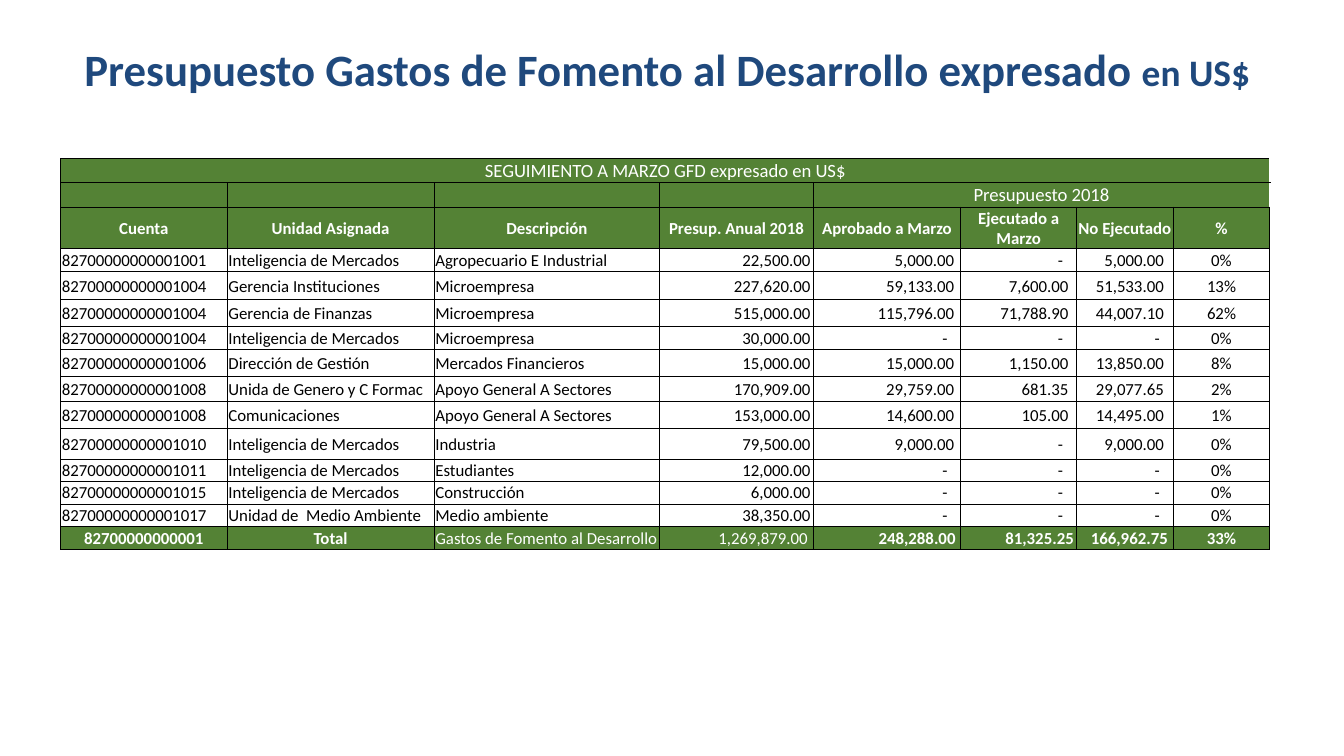
from typing import NamedTuple

import pptx
import pptx.dml.color
import pptx.enum.text
import pptx.oxml
import pptx.oxml.ns
import pptx.table
import pptx.util

Inches = pptx.util.Inches
Pt = pptx.util.Pt
ALIGN = pptx.enum.text.PP_ALIGN
ANCHOR = pptx.enum.text.MSO_ANCHOR

COLORS = {"title": "1F497D", "green": "548235", "white": "FFFFFF", "black": "000000"}
FONT = "Calibri"


class CellStyle(NamedTuple):
    size: float = 9
    bold: bool = False
    color: str = "black"
    fill: str = ""
    align: ALIGN = ALIGN.LEFT
    anchor: ANCHOR = ANCHOR.MIDDLE
    right_inset: float = 0.01
    sides: str = "LRTB"


class Expense(NamedTuple):
    account: str
    unit: str
    description: str
    annual: str
    approved: str
    executed: str
    pending: str
    percent: str


COLUMN_WIDTHS = [1.24, 1.54, 1.68, 1.14, 1.1, 0.86, 0.72, 0.72]
ROW_HEIGHTS = [0.18, 0.18, 0.29, 0.17, 0.21, 0.2, 0.17, 0.2, 0.19, 0.2,
               0.23, 0.16, 0.17, 0.17, 0.17]
HEADERS = ["Cuenta", "Unidad Asignada", "Descripción", "Presup. Anual 2018",
           "Aprobado a Marzo", "Ejecutado a Marzo", "No Ejecutado", "%"]
MARKETS = "Inteligencia de Mercados"
SECTORS = "Apoyo General A Sectores"
EXPENSES = [
    Expense("82700000000001001", MARKETS, "Agropecuario E Industrial",
            "22,500.00", "5,000.00", "-", "5,000.00", "0%"),
    Expense("82700000000001004", "Gerencia Instituciones", "Microempresa",
            "227,620.00", "59,133.00", "7,600.00", "51,533.00", "13%"),
    Expense("82700000000001004", "Gerencia de Finanzas", "Microempresa",
            "515,000.00", "115,796.00", "71,788.90", "44,007.10", "62%"),
    Expense("82700000000001004", MARKETS, "Microempresa",
            "30,000.00", "-", "-", "-", "0%"),
    Expense("82700000000001006", "Dirección de Gestión", "Mercados Financieros",
            "15,000.00", "15,000.00", "1,150.00", "13,850.00", "8%"),
    Expense("82700000000001008", "Unida de Genero y C Formac", SECTORS,
            "170,909.00", "29,759.00", "681.35", "29,077.65", "2%"),
    Expense("82700000000001008", "Comunicaciones", SECTORS,
            "153,000.00", "14,600.00", "105.00", "14,495.00", "1%"),
    Expense("82700000000001010", MARKETS, "Industria",
            "79,500.00", "9,000.00", "-", "9,000.00", "0%"),
    Expense("82700000000001011", MARKETS, "Estudiantes",
            "12,000.00", "-", "-", "-", "0%"),
    Expense("82700000000001015", MARKETS, "Construcción",
            "6,000.00", "-", "-", "-", "0%"),
    Expense("82700000000001017", "Unidad de  Medio Ambiente", "Medio ambiente",
            "38,350.00", "-", "-", "-", "0%"),
]
TOTAL = Expense("82700000000001", "Total", "Gastos de Fomento al Desarrollo",
                "1,269,879.00", "248,288.00", "81,325.25", "166,962.75", "33%")

# Right insets of the amount columns, by column index
AMOUNT_INSETS = {3: 0.02, 4: 0.05, 5: 0.06, 6: 0.07}
DASH_INSET = 0.1
TOTAL_INSETS = {3: 0.04, 4: 0.04, 5: 0.02, 6: 0.04}

HEADER = CellStyle(bold=True, color="white", fill="green", align=ALIGN.CENTER)
BANNER = HEADER._replace(size=10, bold=False, anchor=ANCHOR.BOTTOM, sides="LTB")
SPACER = BANNER._replace(sides="LRTB")
BODY = CellStyle()


def rgb(name: str) -> pptx.dml.color.RGBColor:
    return pptx.dml.color.RGBColor.from_string(COLORS[name])


def add_run(paragraph, text: str, size: float, bold: bool, color: str) -> None:
    run = paragraph.add_run()
    run.text = text
    run.font.name = FONT
    run.font.size = Pt(size)
    run.font.bold = bold
    run.font.color.rgb = rgb(color)


def add_borders(cell: pptx.table._Cell, sides: str) -> None:
    properties = cell._tc.get_or_add_tcPr()
    for side in sides:
        properties.append(pptx.oxml.parse_xml(
            f'<a:ln{side} {pptx.oxml.ns.nsdecls("a")} w="{Pt(0.5)}"><a:solidFill>'
            f'<a:srgbClr val="{COLORS["black"]}"/></a:solidFill></a:ln{side}>'))


def fill_cell(cell: pptx.table._Cell, text: str, style: CellStyle) -> None:
    cell.margin_left = cell.margin_top = Inches(0.01)
    cell.margin_right = Inches(style.right_inset)
    cell.margin_bottom = 0
    cell.vertical_anchor = style.anchor
    add_borders(cell, style.sides)
    if style.fill:
        cell.fill.solid()
        cell.fill.fore_color.rgb = rgb(style.fill)
    else:
        cell.fill.background()
    paragraph = cell.text_frame.paragraphs[0]
    paragraph.alignment = style.align
    if text:
        add_run(paragraph, text, style.size, style.bold, style.color)
    else:
        # Keeps an empty cell from growing its row
        end = pptx.oxml.parse_xml(
            f'<a:endParaRPr {pptx.oxml.ns.nsdecls("a")} sz="{style.size * 100}"/>')
        paragraph._p.append(end)


def expense_style(column: int, text: str) -> CellStyle:
    if column in AMOUNT_INSETS:
        inset = DASH_INSET if text == "-" else AMOUNT_INSETS[column]
        return BODY._replace(align=ALIGN.RIGHT, right_inset=inset)
    return BODY._replace(align=ALIGN.CENTER if column == 7 else ALIGN.LEFT)


def total_style(column: int) -> CellStyle:
    style = HEADER._replace(bold=column not in (2, 3))
    if column in TOTAL_INSETS:
        return style._replace(align=ALIGN.RIGHT, right_inset=TOTAL_INSETS[column])
    return style._replace(align=ALIGN.LEFT) if column == 2 else style


def add_title(slide) -> None:
    title = slide.shapes.add_textbox(Inches(0.5), Inches(0.23), Inches(8.9), Inches(0.56))
    frame = title.text_frame
    frame.word_wrap = True
    frame.margin_left = 0
    frame.vertical_anchor = ANCHOR.MIDDLE
    paragraph = frame.paragraphs[0]
    paragraph.alignment = ALIGN.RIGHT
    add_run(paragraph, "Presupuesto Gastos de Fomento al Desarrollo expresado ",
            24, True, "title")
    add_run(paragraph, "en US$", 20, True, "title")


def add_budget_table(slide) -> None:
    budget = slide.shapes.add_table(
        len(ROW_HEIGHTS), len(COLUMN_WIDTHS), Inches(0.45), Inches(1.18),
        Inches(sum(COLUMN_WIDTHS)), Inches(sum(ROW_HEIGHTS))).table
    budget.first_row = budget.horz_banding = False
    for column, width in zip(budget.columns, COLUMN_WIDTHS):
        column.width = Inches(width)
    for row, height in zip(budget.rows, ROW_HEIGHTS):
        row.height = Inches(height)

    # Banner rows
    budget.cell(0, 0).merge(budget.cell(0, 7))
    fill_cell(budget.cell(0, 0), "SEGUIMIENTO A MARZO GFD expresado en US$", BANNER)
    budget.cell(1, 4).merge(budget.cell(1, 7))
    fill_cell(budget.cell(1, 4), "Presupuesto 2018", BANNER)
    for column in range(4):
        fill_cell(budget.cell(1, column), "", SPACER)

    # Headers, expenses and total
    for column, header in enumerate(HEADERS):
        fill_cell(budget.cell(2, column), header, HEADER)
    for row, expense in enumerate(EXPENSES, start=3):
        for column, text in enumerate(expense):
            fill_cell(budget.cell(row, column), text, expense_style(column, text))
    for column, text in enumerate(TOTAL):
        fill_cell(budget.cell(len(ROW_HEIGHTS) - 1, column), text, total_style(column))


def main() -> None:
    deck = pptx.Presentation()
    # Widescreen 16:9
    deck.slide_width = Inches(10)
    deck.slide_height = deck.slide_width * 9 // 16
    slide = deck.slides.add_slide(deck.slide_layouts[6])
    add_title(slide)
    add_budget_table(slide)
    deck.save("out.pptx")


if __name__ == "__main__":
    main()
